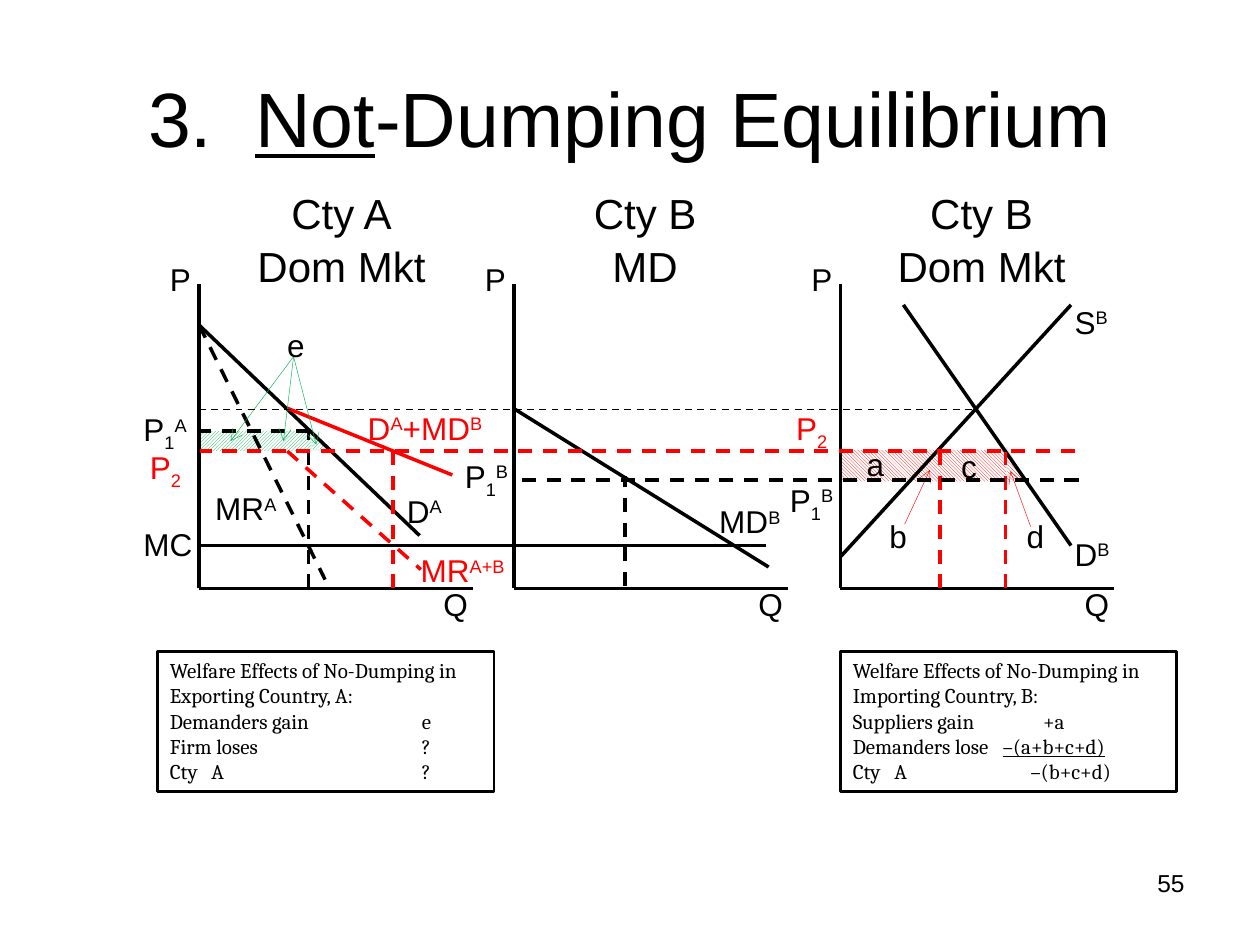
from lxml import etree
from pptx import Presentation
from pptx.dml.color import RGBColor
from pptx.enum import dml, shapes, text
from pptx.oxml.ns import qn
from pptx.util import Pt

PX = 9144  # 100 px to the inch
INK = {"black": "000000", "red": "FF0000", "green": "00B050",
       "white": "FFFFFF", "pale": "E0F1F2"}
BASE = {"_": "-25000", "^": "30000"}
RECT = shapes.MSO_SHAPE.RECTANGLE
WEDGE = shapes.MSO_SHAPE.RIGHT_TRIANGLE
UP = dml.MSO_PATTERN.DARK_UPWARD_DIAGONAL
DOWN = dml.MSO_PATTERN.DARK_DOWNWARD_DIAGONAL
LEFT, MID, RIGHT = text.PP_ALIGN.LEFT, text.PP_ALIGN.CENTER, text.PP_ALIGN.RIGHT


def rgb(name):
    return RGBColor.from_string(INK[name])


def px(*sizes):
    return [size * PX for size in sizes]


def write(par, marked, size, ink="black", font="Arial", align=LEFT):
    """Runs are split by |; a leading _ lowers, ^ raises, = underlines."""
    par.alignment = align
    for part in marked.split("|"):
        mark = part[0] if part[0] in "_^=" else ""
        run = par.add_run()
        run.text = part[len(mark):]
        run.font.size, run.font.name = Pt(size), font
        run.font.color.rgb = rgb(ink)
        if mark == "=":
            run.font.underline = True
        elif mark:
            run._r.get_or_add_rPr().set("baseline", BASE[mark])


def label(slide, box, x, y, *rows, w=75, h=40, size=18, ink="black", align=LEFT):
    area = slide.shapes.add_textbox(*px(box[0] + x, box[1] + y, w, h))
    frame = area.text_frame
    frame.word_wrap = True
    for i, row in enumerate(rows):
        par = frame.add_paragraph() if i else frame.paragraphs[0]
        par.line_spacing = 1.05
        write(par, row, size, ink, align=align)


def line(slide, box, x1, y1, x2, y2, ink="black", wide=2, dash=False, arrow=False):
    x, y = box[:2]
    link = slide.shapes.add_connector(shapes.MSO_CONNECTOR.STRAIGHT,
                                      *px(x + x1, y + y1, x + x2, y + y2))
    link.line.color.rgb, link.line.width = rgb(ink), Pt(wide)
    if dash:
        link.line.dash_style = dml.MSO_LINE.DASH
    if arrow:
        etree.SubElement(link.line._get_or_add_ln(), qn("a:tailEnd"), type="arrow")
    etree.SubElement(link._element.spPr, qn("a:effectLst"))


def hatch(slide, box, kind, x, y, w, h, ink, way):
    area = slide.shapes.add_shape(kind, *px(box[0] + x, box[1] + y, w, h))
    area.shadow.inherit = False
    area.fill.patterned()
    area.fill.pattern = way
    area.fill.fore_color.rgb, area.fill.back_color.rgb = rgb(ink), rgb("white")
    if kind == WEDGE:
        area.line.color.rgb, area.line.width = rgb("pale"), Pt(0.75)
    else:
        area.line.fill.background()


def axes(slide, box, shift, *head):
    w, h = box[2:]
    line(slide, box, 0, h, w, h)
    line(slide, box, 0, h, 0, 0)
    label(slide, box, -33, -25, "P")
    label(slide, box, w - 33, h - 9, "Q")
    label(slide, box, shift, -83, *head, w=158, h=91, size=24, align=MID)


def home(slide, box):
    """Exporting country A."""
    h = box[3]
    hatch(slide, box, RECT, 0, 117, 89, 16, "green", UP)
    hatch(slide, box, WEDGE, 89, 116, 13, 16, "green", UP)
    axes(slide, box, 34, "Cty A", "Dom Mkt")
    # Demand, marginal revenue and first price
    line(slide, box, 0, 33, 175, 200)
    line(slide, box, 0, 33, 100, 235, dash=True)
    line(slide, box, 87, h, 87, 117, dash=True)
    line(slide, box, 88, 117, 0, 117, dash=True)
    # Joint demand and its marginal revenue
    line(slide, box, 70, 99, 201, 152, "red")
    line(slide, box, 154, h, 154, 133, "red", dash=True)
    line(slide, box, 70, 133, 176, 227, "red", dash=True)
    for x, y in ((25, 125), (67, 125), (93, 128)):
        line(slide, box, 75, 58, x, y, "green", 0.25, arrow=True)
    for x, y, name in ((-54, 94, "P|_1|^A"), (-54, 185, "MC"),
                       (3, 157, "MR|^A"), (155, 159, "D|^A")):
        label(slide, box, x, y, name)
    for x, y, name, w in ((124, 93, "D|^A|+MD|^B", 135),
                          (166, 206, "MR|^A+B", 117), (-49, 124, "P|_2", 75)):
        label(slide, box, x, y, name, w=w, ink="red")
    label(slide, box, 60, 27, "e", w=33)


def trade(slide, box):
    """Import demand of country B."""
    axes(slide, box, 25, "Cty B", "MD")
    line(slide, box, 1, 100, 202, 225)
    line(slide, box, 88, 240, 88, 153, dash=True)
    label(slide, box, -49, 131, "P|_1|^B")
    label(slide, box, 153, 167, "MD|^B")


def abroad(slide, box):
    """Importing country B."""
    h = box[3]
    hatch(slide, box, RECT, 0, 132, 133, 25, "red", DOWN)
    hatch(slide, box, WEDGE, 132, 130, 14, 27, "red", DOWN)
    axes(slide, box, 33, "Cty B", "Dom Mkt")
    # Demand and supply
    line(slide, box, 50, 17, 183, 208)
    line(slide, box, 0, 217, 183, 17)
    for x in (79, 131):
        line(slide, box, x, h, x, 134, "red", dash=True)
    for ends in ((51, 191, 71, 148), (151, 193, 135, 149)):
        line(slide, box, *ends, "red", 0.25, arrow=True)
    for x, y, name in ((176, 9, "S|^B"), (176, 193, "D|^B"), (-50, 150, "P|_1|^B")):
        label(slide, box, x, y, name)
    label(slide, box, -45, 93, "P|_2", ink="red")
    for x, y, name in ((11, 122, "a"), (86, 123, "c"), (138, 179, "d"), (29, 179, "b")):
        label(slide, box, x, y, name, w=33)


def levels(slide, box):
    """Price and cost levels that run across the panels."""
    line(slide, box, 0, 100, 617, 100, wide=1, dash=True)
    line(slide, box, 0, 208, 450, 208)
    line(slide, box, 698, 156, 250, 156, dash=True)
    line(slide, box, 695, 133, 1, 133, "red", dash=True)


def welfare(slide, box, rows):
    """Framed table of gains; each row has its own tab stops."""
    area = slide.shapes.add_shape(RECT, *px(*box))
    area.shadow.inherit = False
    area.fill.background()
    area.line.color.rgb, area.line.width = rgb("black"), Pt(1.5)
    frame = area.text_frame
    frame.word_wrap = True
    frame.vertical_anchor = text.MSO_ANCHOR.TOP
    for i, (row, *stops) in enumerate(rows):
        par = frame.add_paragraph() if i else frame.paragraphs[0]
        write(par, row, 12, font="Cambria")
        if stops:
            tabs = etree.SubElement(par._p.get_or_add_pPr(), qn("a:tabLst"))
            for stop in stops:
                etree.SubElement(tabs, qn("a:tab"), pos=str(stop * PX), algn="l")


def title(slide, box):
    head = slide.shapes.title
    head.left, head.top, head.width, head.height = px(*box)
    head.text_frame.vertical_anchor = text.MSO_ANCHOR.MIDDLE
    write(head.text_frame.paragraphs[0], "3.  |=Not|-Dumping Equilibrium", 44, align=MID)


def main():
    deck = Presentation()
    deck.slide_width, deck.slide_height = px(1000, 750)
    slide = deck.slides.add_slide(deck.slide_layouts[5])
    title(slide, (50, 30, 900, 125))
    # Three panels, then the levels they share
    for draw, x in ((home, 158), (trade, 408), (abroad, 667)):
        draw(slide, (x, 225, 217, 242))
    levels(slide, (158, 225))
    # Welfare effects
    welfare(slide, (125, 517, 267, 111), [
        ("Welfare Effects of No-Dumping in Exporting Country, A:",),
        ("Demanders gain\te", 200),
        ("Firm loses\t?", 200),
        ("Cty\tA\t?", 33, 200)])
    welfare(slide, (667, 517, 267, 111), [
        ("Welfare Effects of No-Dumping in Importing Country, B:",),
        ("Suppliers gain\t+a", 151),
        ("Demanders lose\t|=–(a+b+c+d)\t", 119, 207),
        ("Cty\tA\t–(b+c+d)", 33, 141)])
    # Slide number
    label(slide, (717, 683), 0, 0, "55", w=233, h=52, size=14, align=RIGHT)
    deck.save("out.pptx")


if __name__ == "__main__":
    main()
